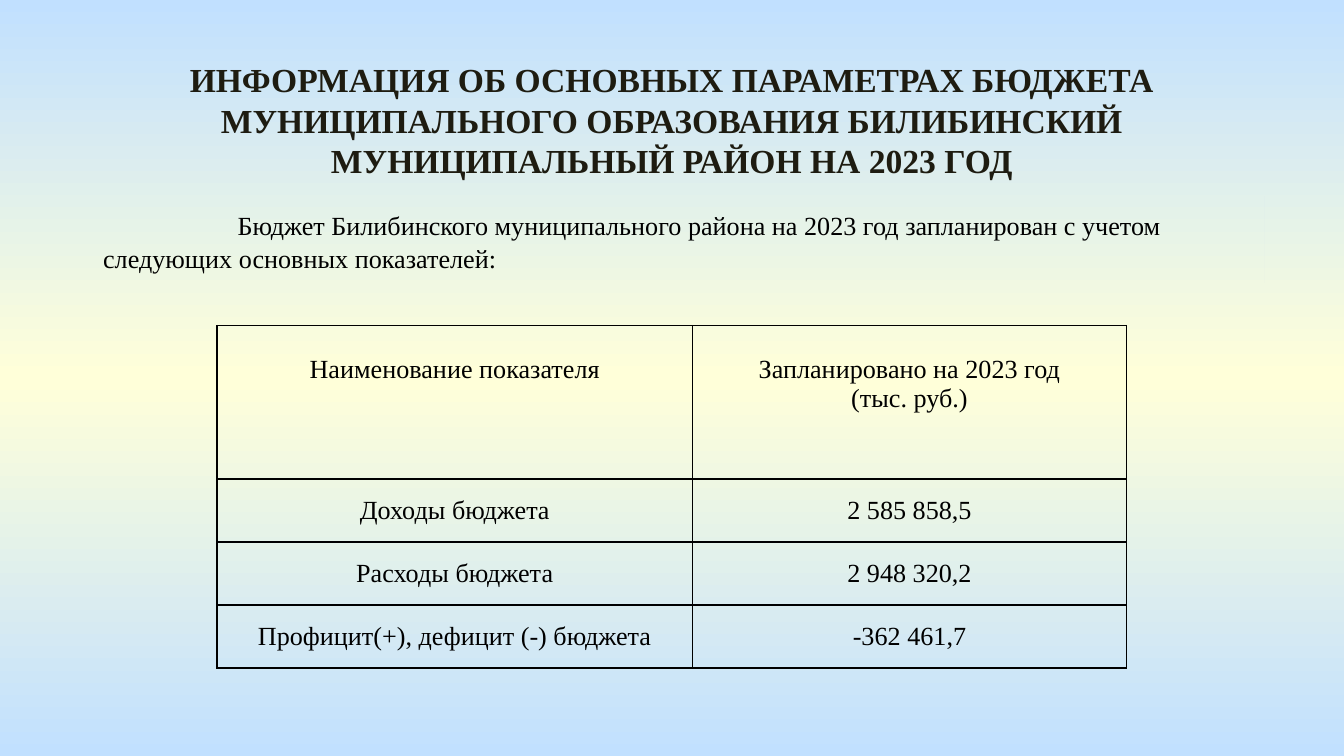
from copy import deepcopy
from dataclasses import dataclass

from lxml import etree
from pptx import Presentation
from pptx.dml.color import RGBColor
from pptx.enum.shapes import MSO_SHAPE
from pptx.enum.text import MSO_ANCHOR, MSO_AUTO_SIZE, PP_ALIGN
from pptx.oxml.ns import qn
from pptx.util import Cm, Pt

LEFT, CENTER = PP_ALIGN.LEFT, PP_ALIGN.CENTER
TOP, MIDDLE = MSO_ANCHOR.TOP, MSO_ANCHOR.MIDDLE


@dataclass(frozen=True)
class Theme:
    font: str = "Times New Roman"
    head: int = 18
    body: int = 14
    rule: int = 1
    ink: str = "000000"
    dark: str = "1E1C11"
    sky: str = "C1E0FF"
    cream: str = "FFFFD9"


theme = Theme()


def write(frame, text, size=theme.body, color=theme.ink, bold=False,
          align=CENTER, anchor=TOP):
    """Fill a text frame, one paragraph per line of text."""
    frame.text = text
    frame.word_wrap = True
    frame.vertical_anchor = anchor
    for para in frame.paragraphs:
        para.alignment = align
        for run in para.runs:
            font = run.font
            font.name, font.size, font.bold = theme.font, Pt(size), bold
            font.color.rgb = RGBColor.from_string(color)


def frame_cell(cell):
    """Draw the four borders of a table cell."""
    props = cell._tc.get_or_add_tcPr()
    for side in ("lnL", "lnR", "lnT", "lnB"):
        line = etree.SubElement(props, qn(f"a:{side}"), w=str(Pt(theme.rule)))
        fill = etree.SubElement(line, qn("a:solidFill"))
        etree.SubElement(fill, qn("a:srgbClr"), val=theme.ink)


deck = Presentation()
deck.slide_width, deck.slide_height = Cm(25.4), Cm(14.28)
slide = deck.slides.add_slide(deck.slide_layouts[5])

# Background: sky, cream in the middle, sky
back = slide.background.fill
back.gradient()
back.gradient_angle = 90
stops = slide.background._cSld.find(".//" + qn("a:gsLst"))
stops.append(deepcopy(stops[0]))
colors = (theme.sky, theme.cream, theme.sky)
for stop, color, pos in zip(back.gradient_stops, colors, (0, 0.5, 1)):
    stop.color.rgb = RGBColor.from_string(color)
    stop.position = pos

# Title
title = slide.shapes.title
title.left, title.top = Cm(0.89), Cm(0.99)
title.width, title.height = Cm(23.62), Cm(2.57)
write(title.text_frame,
      "ИНФОРМАЦИЯ ОБ ОСНОВНЫХ ПАРАМЕТРАХ БЮДЖЕТА МУНИЦИПАЛЬНОГО "
      "ОБРАЗОВАНИЯ БИЛИБИНСКИЙ МУНИЦИПАЛЬНЫЙ РАЙОН НА 2023 ГОД",
      size=theme.head, color=theme.dark, bold=True)
title.text_frame.auto_size = MSO_AUTO_SIZE.NONE

# Introduction, filled with the slide background
intro = slide.shapes.add_shape(
    MSO_SHAPE.RECTANGLE, Cm(1.7), Cm(3.71), Cm(22.2), Cm(1.63))
intro.shadow.inherit = False
intro.line.fill.background()
intro._element.set("useBgFill", "1")
write(intro.text_frame,
      "Бюджет Билибинского муниципального района на 2023 год запланирован "
      "с учетом следующих основных показателей:", align=LEFT)
intro.text_frame.margin_top = Cm(0.22)
para = intro.text_frame.paragraphs[0]
para.line_spacing = Pt(17.7)
para._p.get_or_add_pPr().set("indent", str(Cm(2.54)))

# Budget table
rows = (
    ("Наименование показателя", "Запланировано на 2023 год\n(тыс. руб.)"),
    ("Доходы бюджета", "2 585 858,5"),
    ("Расходы бюджета", "2 948 320,2"),
    ("Профицит(+), дефицит (-) бюджета", "-362 461,7"),
)
widths = (8.99, 8.2)
heights = (2.9, 1.19, 1.19, 1.19)
table = slide.shapes.add_table(
    len(rows), len(widths), Cm(4.1), Cm(6.15),
    Cm(sum(widths)), Cm(sum(heights))).table
table.first_row = table.horz_banding = False
for col, width in zip(table.columns, widths):
    col.width = Cm(width)
for r, (row, height) in enumerate(zip(rows, heights)):
    table.rows[r].height = Cm(height)
    for c, text in enumerate(row):
        cell = table.cell(r, c)
        write(cell.text_frame, text)
        cell.vertical_anchor = MIDDLE if r else TOP
        cell.margin_left = cell.margin_right = Cm(0.18)
        cell.margin_top = Cm(0 if r else 0.56)
        cell.margin_bottom = Cm(0)
        frame_cell(cell)
        cell.fill.background()

deck.save("out.pptx")
